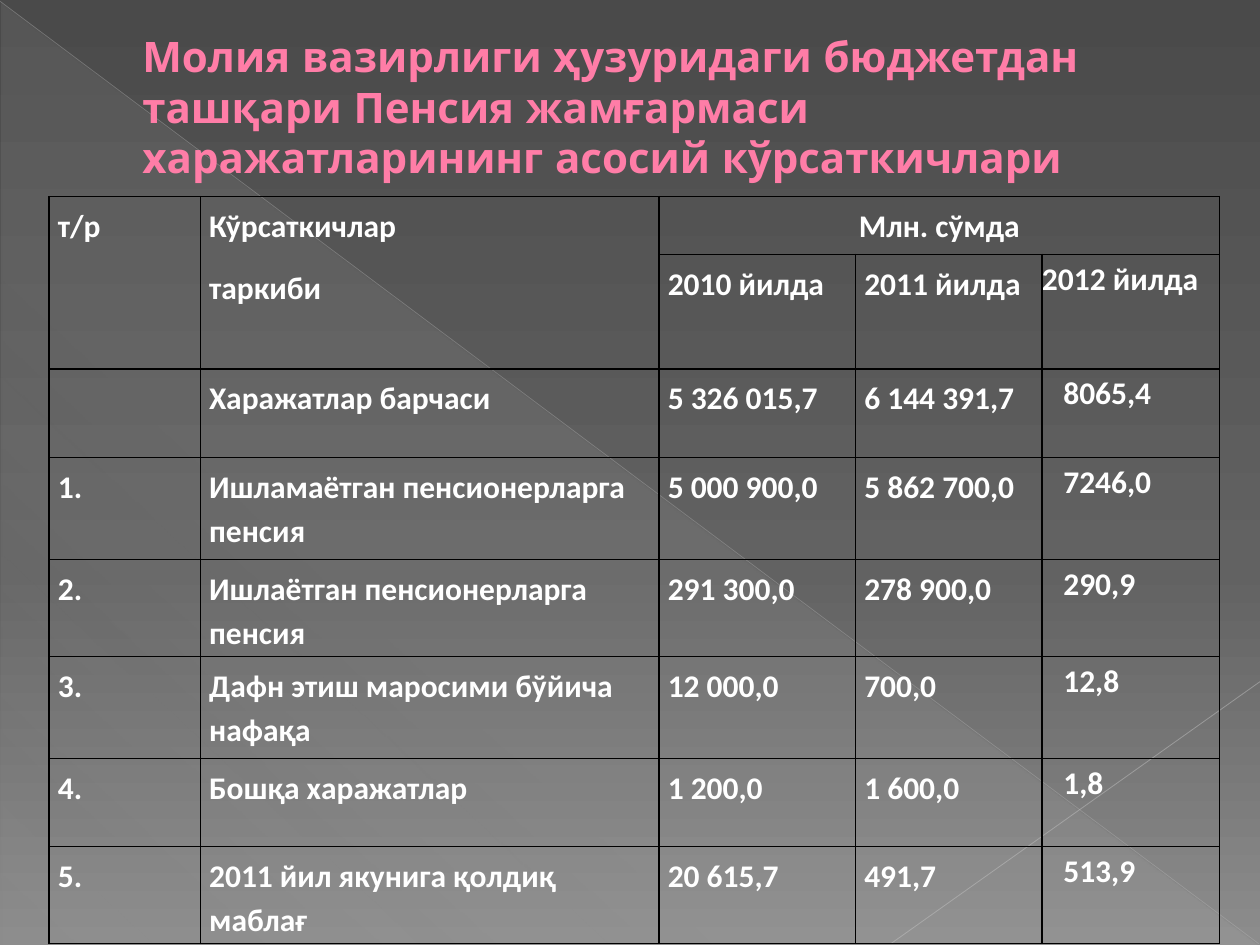
from lxml import etree
from pptx import Presentation
from pptx import util as u
from pptx.dml.color import RGBColor
from pptx.enum import shapes, text
from pptx.oxml.ns import qn


def color(value):
    return RGBColor.from_string(value)


def add_color(parent, value, opacity=100):
    element = etree.SubElement(parent, qn("a:srgbClr"), val=value)
    if opacity < 100:
        etree.SubElement(element, qn("a:alpha"), val=str(opacity * 1000))


def apply(target, values):
    for name, value in values.items():
        setattr(target, name, value)


class SlideBuilder:
    title_font = {"name": "Quicksand", "size": u.Pt(24), "bold": True}
    table_font = {"name": "Calibri", "size": u.Pt(18), "bold": True}
    title_color = "FF7DA7"
    title_outline = "B12761"
    table_color = "FFFFFF"
    border_color = "000000"
    table_paragraph = {"line_spacing": 1.15, "space_after": u.Pt(10)}

    def __init__(self, slide):
        self.slide = slide

    def gradient(self, fill, element, stops, angle):
        fill.gradient()
        fill.gradient_angle = 360 - angle
        stop_list = next(element.iter(qn("a:gsLst")))
        for stop in list(stop_list):
            stop_list.remove(stop)
        for position, value, opacity in stops:
            stop = etree.SubElement(stop_list, qn("a:gs"), pos=str(position * 1000))
            add_color(stop, value, opacity)

    def background(self, stops, angle):
        self.gradient(self.slide.background.fill, self.slide.element, stops, angle)

    def triangle(self, box, stops, angle):
        shape = self.slide.shapes.add_shape(
            shapes.MSO_SHAPE.RIGHT_TRIANGLE, *map(u.Inches, box))
        shape.shadow.inherit = False
        shape.line.fill.background()
        self.gradient(shape.fill, shape.element, stops, angle)

    def line(self, ends, value, width, opacity):
        connector = self.slide.shapes.add_connector(
            shapes.MSO_CONNECTOR.STRAIGHT, *map(u.Inches, ends))
        connector.line.width = u.Pt(width)
        connector.line.fill.solid()
        connector.line.fill.fore_color.rgb = color(value)
        properties = connector.element.spPr
        solid = next(properties.iter(qn("a:solidFill")))
        solid.clear()
        add_color(solid, value, opacity)
        etree.SubElement(properties, qn("a:effectLst"))

    def add_text(self, paragraph, content, font, value):
        run = paragraph.add_run()
        run.text = content
        apply(run.font, font)
        run.font.color.rgb = color(value)
        return run

    def title(self, box, content, indent):
        shape = self.slide.shapes.add_textbox(*map(u.Inches, box))
        frame = shape.text_frame
        apply(frame, {"word_wrap": True, "vertical_anchor": text.MSO_ANCHOR.MIDDLE,
                      "margin_left": u.Inches(0.1 + indent)})
        run = self.add_text(frame.paragraphs[0], content, self.title_font, self.title_color)
        outline = etree.Element(qn("a:ln"), w=str(int(u.Pt(0.5))))
        add_color(etree.SubElement(outline, qn("a:solidFill")), self.title_outline)
        run._r.get_or_add_rPr().insert(0, outline)

    def border(self, cell):
        properties = cell._tc.get_or_add_tcPr()
        for index, side in enumerate(("lnL", "lnR", "lnT", "lnB")):
            edge = etree.Element(qn("a:" + side), w=str(int(u.Pt(1))))
            add_color(etree.SubElement(edge, qn("a:solidFill")), self.border_color)
            properties.insert(index, edge)

    def cell(self, cell, content, margins, alignment):
        left, top, right, bottom = map(u.Inches, margins)
        apply(cell, {"margin_left": left, "margin_top": top,
                     "margin_right": right, "margin_bottom": bottom})
        cell.fill.background()
        self.border(cell)
        frame = cell.text_frame
        for index, words in enumerate(content.split("\n")):
            paragraph = frame.add_paragraph() if index else frame.paragraphs[0]
            apply(paragraph, self.table_paragraph)
            paragraph.alignment = alignment
            if words:
                self.add_text(paragraph, words, self.table_font, self.table_color)

    def table(self, box, widths, heights, rows, merges):
        table = self.slide.shapes.add_table(
            len(rows), len(widths), *map(u.Inches, box)).table
        apply(table, {"first_row": False, "horz_banding": False})
        for column, width in zip(table.columns, widths):
            column.width = u.Inches(width)
        for row, height in zip(table.rows, heights):
            row.height = u.Inches(height)
        last = len(widths) - 1
        for row, contents in enumerate(rows):
            for column, content in enumerate(contents):
                margins = (0.07, 0.04, 0.07, 0.04)
                if column == last and row:
                    margins = (0.17 if row > 1 else 0, 0, 0, 0)
                centered = row == 0 and column == 2
                alignment = text.PP_ALIGN.CENTER if centered else text.PP_ALIGN.LEFT
                self.cell(table.cell(row, column), content, margins, alignment)
        for start, end in merges:
            table.cell(*start).merge(table.cell(*end))


ROWS = [
    ("т/р", "Кўрсаткичлар\nтаркиби", "Млн. сўмда", "", ""),
    ("", "", "2010 йилда", "2011 йилда", "2012 йилда"),
    ("", "Харажатлар барчаси", "5 326 015,7", "6 144 391,7", "8065,4"),
    ("1.", "Ишламаётган пенсионерларга пенсия", "5 000 900,0", "5 862 700,0", "7246,0"),
    ("2.", "Ишлаётган пенсионерларга пенсия", "291 300,0", "278 900,0", "290,9"),
    ("3.", "Дафн этиш маросими бўйича нафақа", "12 000,0", "700,0", "12,8"),
    ("4.", "Бошқа харажатлар", "1 200,0", "1 600,0", "1,8"),
    ("5.", "2011 йил якунига қолдиқ маблағ", "20 615,7", "491,7", "513,9"),
]


def main():
    presentation = Presentation()
    apply(presentation, {"slide_width": u.Inches(10), "slide_height": u.Inches(7.5)})
    builder = SlideBuilder(presentation.slides.add_slide(presentation.slide_layouts[6]))
    builder.background(
        [(0, "4A4A4A", 100), (60, "626262", 100), (100, "8C8C8C", 100)], 90)
    builder.triangle(
        (0.01, 0.02, 9.98, 7.48),
        [(0, "D2D2D2", 10), (70, "D2D2D2", 8), (100, "D2D2D2", 1)], 133)
    builder.line((0, 0.01, 9.99, 7.49), "BFBFBF", 0.39, 35)
    builder.line((10, 5.41, 7.07, 7.49), "C6C6C6", 0.47, 45)
    builder.title(
        (0.5, 0.08, 9, 1.53),
        "Молия вазирлиги ҳузуридаги бюджетдан ташқари Пенсия жамғармаси "
        "харажатларининг асосий кўрсаткичлари", 0.53)
    builder.table(
        (0.39, 1.56, 9.3, 5.87),
        (1.2, 3.64, 1.56, 1.48, 1.41),
        (0.46, 0.91, 0.7, 0.81, 0.7, 0.81, 0.7, 0.69),
        ROWS,
        [((0, 0), (1, 0)), ((0, 1), (1, 1)), ((0, 2), (0, 4))])
    presentation.save("out.pptx")


if __name__ == "__main__":
    main()
